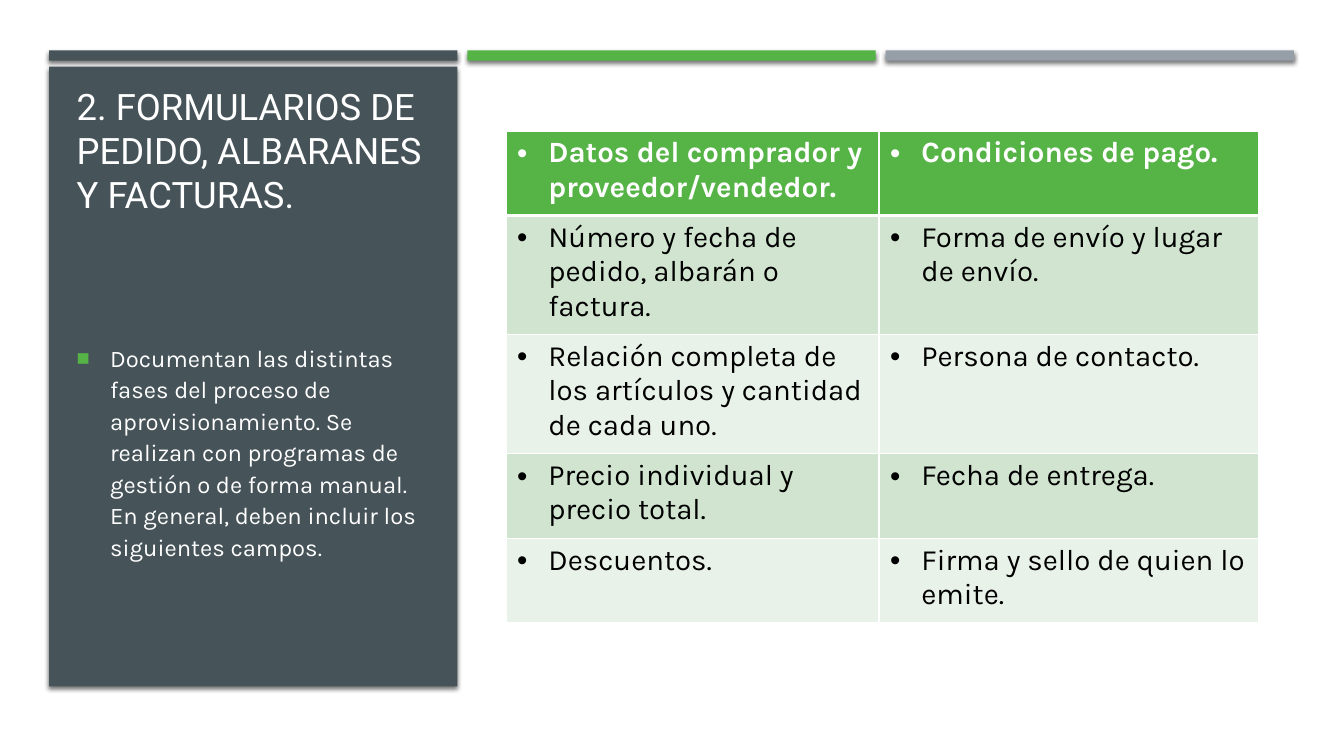
from dataclasses import dataclass

from lxml import etree
from pptx import Presentation
from pptx.dml.color import RGBColor
from pptx.enum.shapes import MSO_SHAPE
from pptx.enum.text import MSO_ANCHOR, MSO_AUTO_SIZE, PP_ALIGN
from pptx.oxml.ns import qn
from pptx.util import Cm, Pt

RECT = MSO_SHAPE.RECTANGLE
LEFT = PP_ALIGN.LEFT
TOP, MIDDLE, BOTTOM = MSO_ANCHOR.TOP, MSO_ANCHOR.MIDDLE, MSO_ANCHOR.BOTTOM
NO_FIT = MSO_AUTO_SIZE.NONE

TITLE = "2. FORMULARIOS DE PEDIDO, ALBARANES Y FACTURAS."
BODY = (
    "Documentan las distintas fases del proceso de aprovisionamiento. "
    "Se realizan con programas de gestión o de forma manual. "
    "En general, deben incluir los siguientes campos."
)
FIELDS = [
    ("Datos del comprador y proveedor/vendedor.", "Condiciones de pago."),
    ("Número y fecha de pedido, albarán o factura.", "Forma de envío y lugar de envío."),
    ("Relación completa de los artículos y cantidad de cada uno.", "Persona de contacto."),
    ("Precio individual y precio total.", "Fecha de entrega."),
    ("Descuentos.", "Firma y sello de quien lo emite."),
]
COL_WIDTHS = [9.4, 9.58]
ROW_HEIGHTS = [2.13, 3, 3, 2.13, 2.13]


@dataclass(frozen=True)
class Theme:
    slate: str = "465359"
    green: str = "56B447"
    grey: str = "969FA7"
    white: str = "FFFFFF"
    black: str = "000000"
    bands: tuple = ("D0E4CF", "E9F2E8")
    head_font: str = "Roboto"
    body_font: str = "Karla"
    title_size: float = 26
    body_size: float = 17
    table_size: float = 21
    thin: float = 0.96
    thick: float = 3


T = Theme()


def rgb(color):
    return RGBColor.from_string(color)


def add_color(parent, color):
    return etree.SubElement(parent, qn("a:srgbClr"), val=color)


def add_run(p, text, font, size, color, bold=False):
    r = p.add_run()
    r.text = text
    r.font.name, r.font.size, r.font.bold = font, Pt(size), bold
    r.font.color.rgb = rgb(color)


def add_bullet(p, char, color, indent, percent=100):
    pPr = p._p.get_or_add_pPr()
    pPr.set("marL", str(Cm(indent)))
    pPr.set("indent", str(-Cm(indent)))
    add_color(etree.SubElement(pPr, qn("a:buClr")), color)
    etree.SubElement(pPr, qn("a:buSzPct"), val=str(percent * 1000))
    etree.SubElement(pPr, qn("a:buFont"), typeface="Arial")
    etree.SubElement(pPr, qn("a:buChar"), char=char)


def add_block(s, x, y, w, h, color):
    sp = s.shapes.add_shape(RECT, Cm(x), Cm(y), Cm(w), Cm(h))
    sp.fill.solid()
    sp.fill.fore_color.rgb = rgb(color)
    sp.line.fill.background()
    sp.shadow.inherit = False
    effects = sp.element.spPr.find(qn("a:effectLst"))
    shadow = etree.SubElement(
        effects, qn("a:outerShdw"), blurRad=str(Pt(3)), dist=str(Pt(2)),
        dir="5400000", rotWithShape="0")
    etree.SubElement(add_color(shadow, T.black), qn("a:alpha"), val="55000")


def place(ph, x, y, w, h, anchor):
    ph.left, ph.top, ph.width, ph.height = Cm(x), Cm(y), Cm(w), Cm(h)
    ph.element.getparent().append(ph.element)
    tf = ph.text_frame
    tf.word_wrap, tf.auto_size, tf.vertical_anchor = True, NO_FIT, anchor
    p = tf.paragraphs[0]
    p.alignment, p.space_before = LEFT, Pt(0)
    return p


def add_border(cell, side, width):
    ln = etree.SubElement(cell._tc.get_or_add_tcPr(), qn(f"a:ln{side}"), w=str(Pt(width)))
    add_color(etree.SubElement(ln, qn("a:solidFill")), T.white)


def fill_cell(cell, row, text):
    header = row == 0
    color = T.white if header else T.black
    for side in "LRTB":
        under_header = (row, side) in ((0, "B"), (1, "T"))
        add_border(cell, side, T.thick if under_header else T.thin)
    cell.fill.solid()
    cell.fill.fore_color.rgb = rgb(T.green if header else T.bands[(row - 1) % 2])
    cell.margin_left = cell.margin_right = Cm(0.28)
    cell.margin_top = cell.margin_bottom = Cm(0.13)
    cell.vertical_anchor = TOP
    p = cell.text_frame.paragraphs[0]
    add_bullet(p, "•", color, 0.79)
    add_run(p, text, T.body_font, T.table_size, color, header)


def add_fields(s, x, y):
    frame = s.shapes.add_table(
        len(FIELDS), len(COL_WIDTHS), Cm(x), Cm(y),
        Cm(sum(COL_WIDTHS)), Cm(sum(ROW_HEIGHTS)))
    table = frame.table
    for col, width in zip(table.columns, COL_WIDTHS):
        col.width = Cm(width)
    for i, (height, texts) in enumerate(zip(ROW_HEIGHTS, FIELDS)):
        table.rows[i].height = Cm(height)
        for j, text in enumerate(texts):
            fill_cell(table.cell(i, j), i, text)


def main():
    """Build the slide on order forms, delivery notes and invoices."""
    prs = Presentation()
    prs.slide_width, prs.slide_height = Cm(33.87), Cm(19.05)
    s = prs.slides.add_slide(prs.slide_layouts[1])
    s.background.fill.solid()
    s.background.fill.fore_color.rgb = rgb(T.white)

    left, width, gap = 1.24, 10.29, 0.25
    for i, color in enumerate((T.slate, T.green, T.grey)):
        add_block(s, left + i * (width + gap), 1.27, width, 0.26, color)
    add_block(s, left, 1.68, width, 15.62, T.slate)

    p = place(s.shapes.title, 1.68, 1.96, 9.47, 3.6, BOTTOM)
    add_run(p, TITLE, T.head_font, T.title_size, T.white)

    p = place(s.placeholders[1], 1.68, 6.05, 9.47, 10.62, MIDDLE)
    p.line_spacing, p.space_after = 1.1, Pt(6)
    add_bullet(p, "■", T.green, 0.84, 92)
    add_run(p, BODY, T.body_font, T.body_size, T.white)

    add_fields(s, 12.75, 3.3)
    prs.save("out.pptx")


if __name__ == "__main__":
    main()
